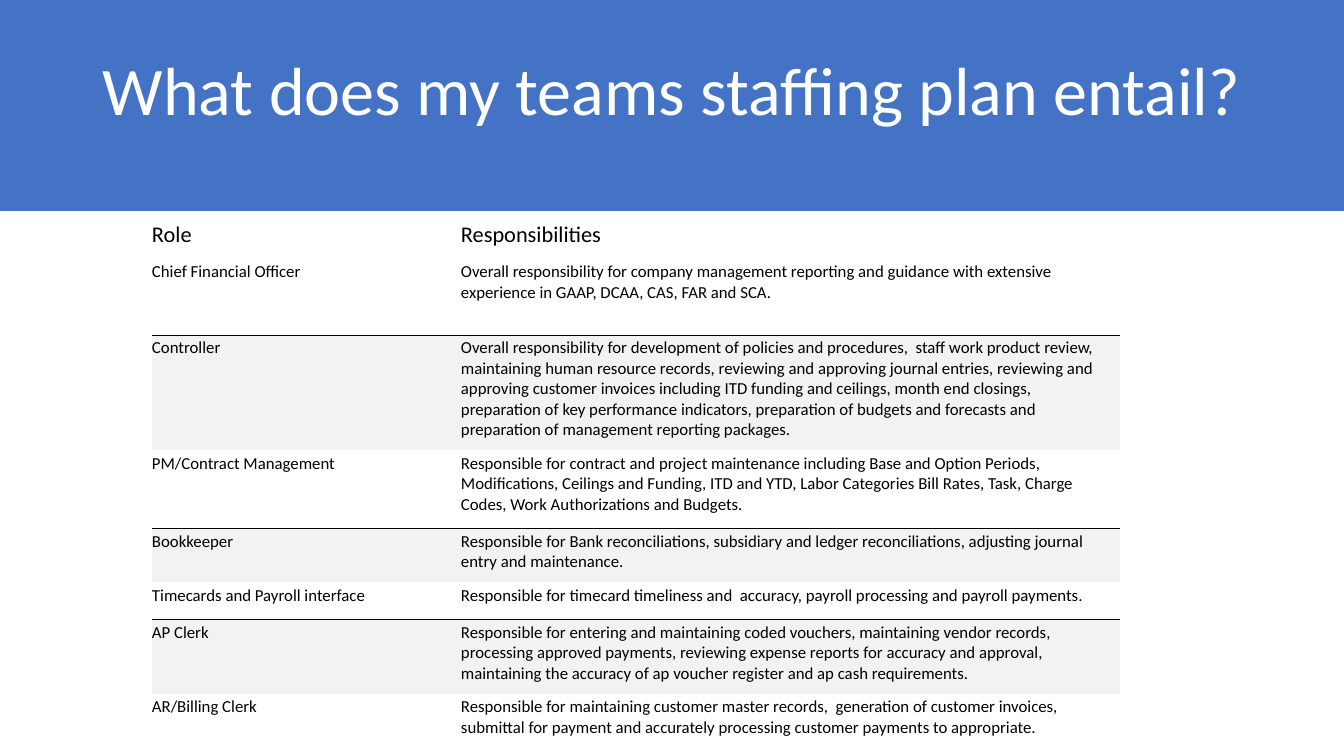
from dataclasses import dataclass
from lxml import etree
from pptx import Presentation
from pptx.dml.color import RGBColor
from pptx.enum.shapes import MSO_SHAPE
from pptx.enum.text import MSO_ANCHOR, MSO_AUTO_SIZE, PP_ALIGN
from pptx.oxml.ns import qn
from pptx.util import Emu, Pt

RECT = MSO_SHAPE.RECTANGLE
TOP, BOTTOM = MSO_ANCHOR.TOP, MSO_ANCHOR.BOTTOM
LEFT, CENTER = PP_ALIGN.LEFT, PP_ALIGN.CENTER
NO_FIT = MSO_AUTO_SIZE.NONE
SCALE = 914400 / 100.8


@dataclass(frozen=True)
class Theme:
    font: str = "Calibri"
    blue: str = "4472C4"
    white: str = "FFFFFF"
    black: str = "000000"
    gray: str = "F2F2F2"
    title: float = 48.6
    head: float = 16
    body: float = 12
    rule: float = 0.75


def px(size):
    return Emu(round(size * SCALE))


def write(frame, text, *, font, size, color, align=LEFT, space=1.0):
    para = frame.paragraphs[0]
    para.alignment = align
    para.line_spacing = space
    run = para.add_run()
    run.text = text
    run.font.name = font
    run.font.size = Pt(size)
    run.font.bold = False
    run.font.color.rgb = RGBColor.from_string(color)


class Deck:
    def __init__(self, theme):
        self.theme = theme
        self.file = Presentation()
        self.file.slide_width = px(1344)
        self.file.slide_height = px(756)
        self.slide = self.file.slides.add_slide(self.file.slide_layouts[5])

    def band(self, x, y, w, h):
        shape = self.slide.shapes.add_shape(RECT, px(x), px(y), px(w), px(h))
        shape.shadow.inherit = False
        shape.fill.solid()
        shape.fill.fore_color.rgb = RGBColor.from_string(self.theme.blue)
        shape.line.fill.background()
        self.slide.shapes.title._element.addprevious(shape._element)

    def title(self, text, x, y, w, h):
        shape = self.slide.shapes.title
        shape.left, shape.top, shape.width, shape.height = map(px, (x, y, w, h))
        frame = shape.text_frame
        frame.auto_size = NO_FIT
        frame.word_wrap = True
        frame.vertical_anchor = BOTTOM
        write(frame, text, font=self.theme.font, size=self.theme.title,
              color=self.theme.white, align=CENTER, space=0.9)

    def edges(self, cell, ruled):
        props = cell._tc.get_or_add_tcPr()
        for index, side in enumerate("LRTB"):
            line = etree.Element(qn(f"a:ln{side}"), w=str(Pt(self.theme.rule)))
            if side in ruled:
                fill = etree.SubElement(line, qn("a:solidFill"))
                etree.SubElement(fill, qn("a:srgbClr"), val=self.theme.black)
            else:
                etree.SubElement(line, qn("a:noFill"))
            props.insert(index, line)

    def cell(self, cell, text, *, head, shade, ruled):
        cell.margin_left, cell.margin_right = px(0), px(6)
        cell.margin_top, cell.margin_bottom = px(2 if head else 3), px(10)
        cell.vertical_anchor = BOTTOM if head else TOP
        if shade:
            cell.fill.solid()
            cell.fill.fore_color.rgb = RGBColor.from_string(self.theme.gray)
        else:
            cell.fill.background()
        self.edges(cell, ruled)
        size = self.theme.head if head else self.theme.body
        write(cell.text_frame, text, font=self.theme.font, size=size,
              color=self.theme.black)

    def table(self, rows, x, y, widths, heights):
        table = self.slide.shapes.add_table(
            len(rows), len(widths), px(x), px(y),
            px(sum(widths)), px(sum(heights))).table
        table.first_row = table.horz_banding = False
        for col, width in zip(table.columns, widths):
            col.width = px(width)
        last = len(rows) - 1
        for r, (row, height) in enumerate(zip(rows, heights)):
            table.rows[r].height = px(height)
            shade = r > 0 and r % 2 == 0
            ruled = "T" if shade else "" if r in (0, last) else "B"
            for c, text in enumerate(row):
                self.cell(table.cell(r, c), text, head=r == 0,
                          shade=shade, ruled=ruled)


ROLES = [
    ("Role", "Responsibilities"),
    ("Chief Financial Officer",
     "Overall responsibility for company management reporting and guidance "
     "with extensive experience in GAAP, DCAA, CAS, FAR and SCA."),
    ("Controller",
     "Overall responsibility for development of policies and procedures,  "
     "staff work product review,  maintaining human resource records, "
     "reviewing and approving journal entries, reviewing and approving "
     "customer invoices including ITD funding and ceilings, month end "
     "closings, preparation of key performance indicators, preparation of "
     "budgets and forecasts and preparation of management reporting packages."),
    ("PM/Contract Management",
     "Responsible for contract and project maintenance including Base and "
     "Option Periods, Modifications, Ceilings and Funding, ITD and YTD, Labor "
     "Categories Bill Rates, Task, Charge Codes, Work Authorizations and "
     "Budgets."),
    ("Bookkeeper",
     "Responsible for Bank reconciliations, subsidiary and ledger "
     "reconciliations, adjusting journal entry and maintenance."),
    ("Timecards and Payroll interface",
     "Responsible for timecard timeliness and  accuracy, payroll processing "
     "and payroll payments."),
    ("AP Clerk",
     "Responsible for entering and maintaining coded vouchers, maintaining "
     "vendor records, processing approved payments, reviewing expense reports "
     "for accuracy and approval, maintaining the accuracy of ap voucher "
     "register and ap cash requirements."),
    ("AR/Billing Clerk",
     "Responsible for maintaining customer master records,  generation of "
     "customer invoices, submittal for payment and accurately processing "
     "customer payments to appropriate."),
]


def main():
    deck = Deck(Theme())
    deck.band(0, 0, 1344, 211)
    deck.title("What does my teams staffing plan entail?", 92, 32, 1159, 103)
    deck.table(ROLES, 152, 217, (309, 659), (42, 76, 115, 78, 53, 37, 73, 53))
    deck.file.save("out.pptx")


if __name__ == "__main__":
    main()
